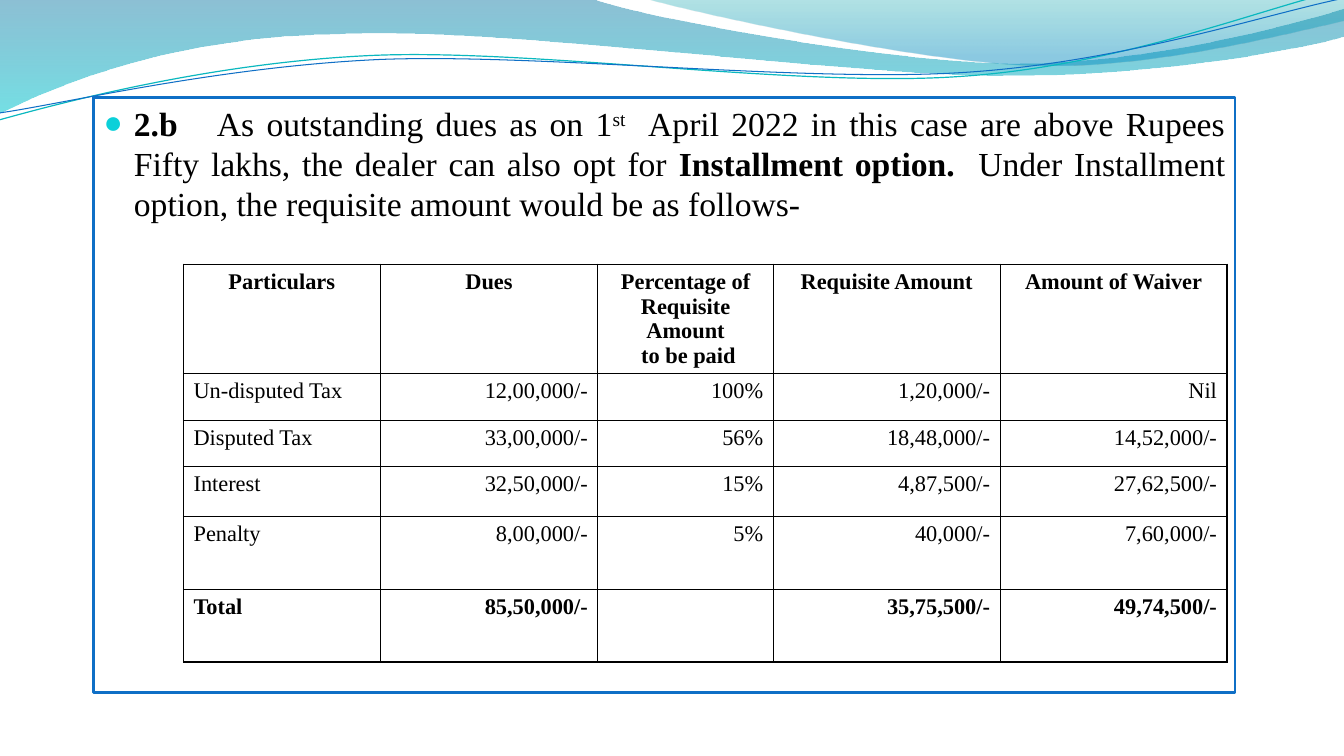
from lxml import etree
from pptx import Presentation
from pptx.dml.color import RGBColor
from pptx.enum.shapes import MSO_SHAPE as SHAPE
from pptx.enum.text import MSO_ANCHOR as ANCHOR, PP_ALIGN as ALIGN
from pptx.oxml import parse_xml
from pptx.oxml.ns import nsdecls, qn
from pptx.util import Pt

PX = 9144  # EMU per px, 100 px to the inch
FONT = "Times New Roman"

BLACK = RGBColor(0x00, 0x00, 0x00)
WHITE = RGBColor(0xFF, 0xFF, 0xFF)
BLUE = RGBColor(0x0F, 0x6F, 0xC6)
TEAL = RGBColor(0x0A, 0xB8, 0xBF)
BULLET = RGBColor(0x0B, 0xD0, 0xD9)
DEEP_BLUE = RGBColor(0x00, 0x74, 0xA1)
CYAN = RGBColor(0x00, 0xC6, 0xCF)
SEA_GREEN = RGBColor(0x00, 0xA1, 0xA9)
SKY_BLUE = RGBColor(0x00, 0x8B, 0xBF)

# Outlines: a pair is a corner, a six-number tuple is a Bezier curve
WIDE_BAND = [
    (0, 0), (587, -1),
    (634, 17, 885, 63, 1011, 63), (1138, 63, 1278, 26, 1333, 9),
    (1335, 36),
    (1311, 44, 1160, 76, 994, 75), (829, 75, 509, 28, 343, 34),
    (172, 36, 61, 83, -1, 113),
]
RIGHT_BAND = [
    (639, -1),
    (679, 11, 909, 62, 1025, 65), (1141, 69, 1282, 32, 1333, 21),
    (1333, 0),
]
TEAL_LINE = [
    (-1, 119),
    (64, 101, 211, 62, 369, 55), (527, 48, 790, 87, 950, 76),
    (1110, 66, 1252, 8, 1331, -10),
]
BLUE_LINE = [
    (0, 112),
    (63, 103, 218, 66, 378, 59), (537, 53, 796, 82, 955, 72),
    (1115, 62, 1255, 14, 1334, -2),
]

# Text runs: wording, bold, baseline shift in percent
INTRO = [
    ("2.b\t ", True, 0),
    ("As outstanding dues as on 1", False, 0),
    ("st", False, 30),
    ("  April 2022 in this case are above Rupees Fifty lakhs, "
     "the dealer can also opt for ", False, 0),
    ("Installment option.  ", True, 0),
    ("Under Installment option, the requisite amount would be as follows-",
     False, 0),
]

COLUMNS = [195, 216, 174, 225, 225]
ROWS = [78, 46, 46, 50, 72, 72]
DUES = [
    ["Particulars", "Dues", "Percentage of Requisite Amount\n to be paid",
     "Requisite Amount", "Amount of Waiver"],
    ["Un-disputed Tax", "12,00,000/-", "100%", "1,20,000/-", "Nil"],
    ["Disputed Tax", "33,00,000/-", "56%", "18,48,000/-", "14,52,000/-"],
    ["Interest", "32,50,000/-", "15%", "4,87,500/-", "27,62,500/-"],
    ["Penalty", "8,00,000/-", "5%", "40,000/-", "7,60,000/-"],
    ["Total", "85,50,000/-", "", "35,75,500/-", "49,74,500/-"],
]


def px(*lengths):
    return [round(n * PX) for n in lengths]


def add_outline(s, outline, close):
    points = [part[i:i + 2] for part in outline for i in range(0, len(part), 2)]
    builder = s.shapes.build_freeform(*points[0], scale=PX)
    builder.add_line_segments(points[1:], close=close)
    sp = builder.convert_to_shape()
    sp.shadow.inherit = False
    # Join the three points of each curve into one Bezier segment
    pieces = iter(list(sp.element.iter(qn("a:lnTo"))))
    for part in outline[1:]:
        first = next(pieces)
        if len(part) == 6:
            first.tag = qn("a:cubicBezTo")
            for piece in (next(pieces), next(pieces)):
                first.append(piece[0])
                piece.getparent().remove(piece)
    return sp


def add_band(s, outline, stops):
    sp = add_outline(s, outline, True)
    sp.line.fill.background()
    sp.fill.background()
    gs = "".join(f'<a:gs pos="{pos * 1000}"><a:srgbClr val="{color}">'
                 f'<a:alpha val="{alpha * 1000}"/></a:srgbClr></a:gs>'
                 for pos, color, alpha in stops)
    grad = parse_xml(f'<a:gradFill {nsdecls("a")}><a:gsLst>{gs}</a:gsLst>'
                     '<a:lin ang="5400000" scaled="0"/></a:gradFill>')
    sp_pr = sp.element.spPr
    sp_pr.replace(sp_pr.find(qn("a:noFill")), grad)


def add_wave(s, outline, color, width):
    sp = add_outline(s, outline, False)
    sp.fill.background()
    sp.line.color.rgb = color
    sp.line.width = Pt(width)


def add_run(p, text, size, bold, shift=0):
    r = p.add_run()
    r.text = text
    r.font.name = FONT
    r.font.size = Pt(size)
    r.font.bold = bold
    r.font.color.rgb = BLACK
    if shift:
        r.font._element.set("baseline", str(shift * 1000))


def set_bullet(p, indent):
    p_pr = p._p.get_or_add_pPr()
    p_pr.set("marL", str(indent * PX))
    p_pr.set("indent", str(-indent * PX))
    before = etree.SubElement(p_pr, qn("a:spcBef"))
    etree.SubElement(before, qn("a:spcPct"), val="20000")
    color = etree.SubElement(p_pr, qn("a:buClr"))
    etree.SubElement(color, qn("a:srgbClr"), val=str(BULLET))
    etree.SubElement(p_pr, qn("a:buSzPct"), val="95000")
    etree.SubElement(p_pr, qn("a:buFont"), typeface=FONT)
    etree.SubElement(p_pr, qn("a:buChar"), char="●")


def add_text_frame(s, box, runs):
    sp = s.shapes.add_shape(SHAPE.RECTANGLE, *px(*box))
    sp.shadow.inherit = False
    sp.fill.solid()
    sp.fill.fore_color.rgb = WHITE
    sp.line.color.rgb = BLUE
    sp.line.width = Pt(2)
    tf = sp.text_frame
    tf.word_wrap = True
    tf.vertical_anchor = ANCHOR.TOP
    p = tf.paragraphs[0]
    p.alignment = ALIGN.JUSTIFY
    set_bullet(p, 30)
    for text, bold, shift in runs:
        add_run(p, text, 24, bold, shift)


def set_borders(cell):
    tc_pr = cell._tc.get_or_add_tcPr()
    for i, side in enumerate(("lnL", "lnR", "lnT", "lnB")):
        tc_pr.insert(i, parse_xml(
            f'<a:{side} {nsdecls("a")} w="12700"><a:solidFill>'
            f'<a:srgbClr val="{BLACK}"/></a:solidFill></a:{side}>'))


def add_dues_table(s, left, top):
    size = px(left, top, sum(COLUMNS), sum(ROWS))
    table = s.shapes.add_table(len(ROWS), len(COLUMNS), *size).table
    table.first_row = table.horz_banding = False
    for column, width in zip(table.columns, COLUMNS):
        column.width = width * PX
    for row, height in zip(table.rows, ROWS):
        row.height = height * PX
    for i, values in enumerate(DUES):
        for j, value in enumerate(values):
            cell = table.cell(i, j)
            cell.fill.solid()
            cell.fill.fore_color.rgb = WHITE
            set_borders(cell)
            tf = cell.text_frame
            for k, text in enumerate(value.split("\n") if value else []):
                p = tf.add_paragraph() if k else tf.paragraphs[0]
                p.alignment = (ALIGN.CENTER if i == 0 else
                               ALIGN.RIGHT if j else ALIGN.LEFT)
                add_run(p, text, 16, i in (0, len(DUES) - 1))


def main():
    prs = Presentation()
    prs.slide_width, prs.slide_height = px(1333, 750)
    s = prs.slides.add_slide(prs.slide_layouts[6])

    # Wave decoration
    add_band(s, WIDE_BAND, [(0, DEEP_BLUE, 45), (100, CYAN, 55)])
    add_band(s, RIGHT_BAND, [(0, SEA_GREEN, 30), (80, SKY_BLUE, 45)])
    add_wave(s, TEAL_LINE, TEAL, 0.85)
    add_wave(s, BLUE_LINE, BLUE, 0.75)

    # Introduction and table of dues
    add_text_frame(s, (93, 97, 1132, 590), INTRO)
    add_dues_table(s, 182, 262)

    prs.save("out.pptx")


if __name__ == "__main__":
    main()
